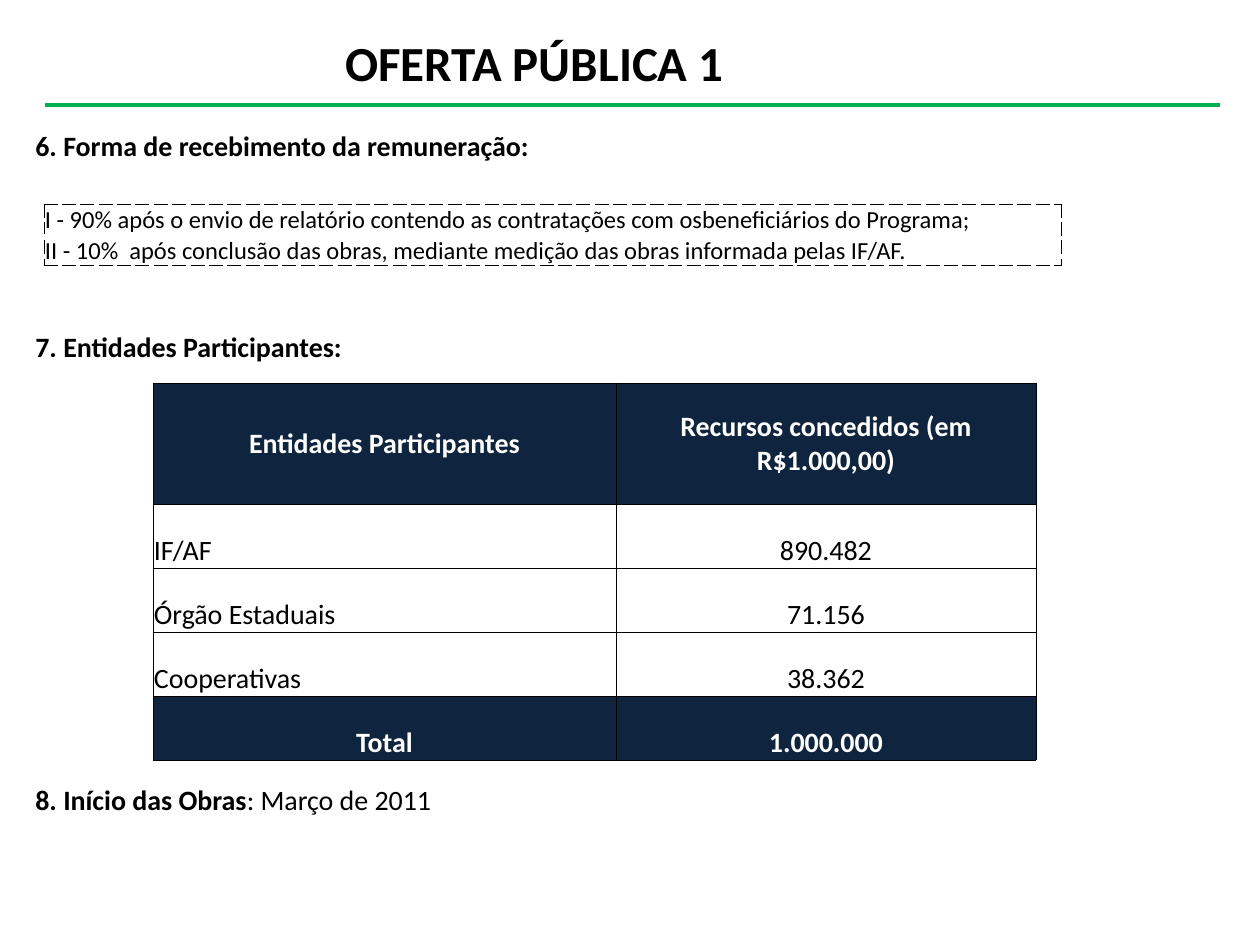
"""Build the slide on public offer 1: payment terms, participants and start of works."""
from lxml import etree
from pptx import Presentation
from pptx.dml.color import RGBColor
from pptx.enum.shapes import MSO_CONNECTOR
from pptx.enum.text import MSO_ANCHOR, PP_ALIGN
from pptx.oxml.ns import qn
from pptx.util import Pt

LEFT, CENTER, JUSTIFY = PP_ALIGN.LEFT, PP_ALIGN.CENTER, PP_ALIGN.JUSTIFY
MIDDLE, BOTTOM = MSO_ANCHOR.MIDDLE, MSO_ANCHOR.BOTTOM
STRAIGHT = MSO_CONNECTOR.STRAIGHT
PX = 914400 / 126
COLORS = {"text": "000000", "light": "FFFFFF", "navy": "0F243E", "green": "00B050"}


def style(paragraph, size, color="text", bold=False, align=LEFT):
    paragraph.alignment = align
    font = paragraph.font
    font.name, font.size, font.bold = "Calibri", Pt(size), bold
    font.color.rgb = RGBColor.from_string(COLORS[color])


def add_grid(left, top, widths, heights, dash):
    grid = slide.shapes.add_table(
        len(heights), len(widths),
        *(int(n * PX) for n in (left, top, sum(widths), sum(heights)))).table
    grid.first_row = grid.horz_banding = False
    for column, width in zip(grid.columns, widths):
        column.width = int(width * PX)
    for row, height in zip(grid.rows, heights):
        row.height = int(height * PX)
    for i, row in enumerate(grid.rows):
        for cell in row.cells:
            cell.margin_left = cell.margin_right = cell.margin_top = int(PX)
            cell.margin_bottom = 0
            cell.vertical_anchor = BOTTOM
            sides = ["L", "R", "T", "B"]
            if dash == "dash":
                sides.remove("B" if i == 0 else "T")
            for side in sides:
                border = etree.SubElement(cell._tc.get_or_add_tcPr(), qn(f"a:ln{side}"), w=str(Pt(0.5)))
                fill = etree.SubElement(border, qn("a:solidFill"))
                etree.SubElement(fill, qn("a:srgbClr"), val=COLORS["text"])
                etree.SubElement(border, qn("a:prstDash"), val=dash)
            cell.fill.background()
    return grid


prs = Presentation()
prs.slide_width, prs.slide_height = int(1260 * PX), int(945 * PX)
slide = prs.slides.add_slide(prs.slide_layouts[6])

rule = slide.shapes.add_connector(STRAIGHT, *(int(n * PX) for n in (45, 105, 1220, 105)))
rule.line.color.rgb = RGBColor.from_string(COLORS["green"])
rule.line.width = Pt(2.25)
etree.SubElement(rule._element.spPr, qn("a:effectLst"))

topics = slide.shapes.add_textbox(*(int(n * PX) for n in (23, 106, 1225, 776))).text_frame
topics.word_wrap = True
sections = [
    ("6. Forma de recebimento da remuneração:", "", 0),
    ("7. Entidades Participantes:", "", 86),
    ("8. Início das Obras", ": Março de 2011", 230),
]
for i, (heading, detail, gap) in enumerate(sections):
    topic = topics.add_paragraph() if i else topics.paragraphs[0]
    topic.line_spacing = 1.5
    topic.space_before = Pt(gap)
    style(topic, 16, bold=True, align=JUSTIFY)
    topic.add_run().text = heading
    if detail:
        start_date = topic.add_run()
        start_date.text = detail
        start_date.font.bold = False

entities = [
    ("Entidades Participantes", "Recursos concedidos (em R$1.000,00)"),
    ("IF/AF", "890.482"),
    ("Órgão Estaduais", "71.156"),
    ("Cooperativas", "38.362"),
    ("Total", "1.000.000"),
]
resources = add_grid(153, 383, [463, 420], [121] + [64] * 4, "solid")
for i, entity in enumerate(entities):
    emphasis = i in (0, len(entities) - 1)
    for j, value in enumerate(entity):
        cell = resources.cell(i, j)
        cell.text = value
        style(cell.text_frame.paragraphs[0], 16, "light" if emphasis else "text",
              emphasis, CENTER if emphasis or j else LEFT)
        if emphasis:
            cell.fill.solid()
            cell.fill.fore_color.rgb = RGBColor.from_string(COLORS["navy"])
        if i == 0:
            cell.vertical_anchor = MIDDLE

installments = [
    "I - 90% após o envio de relatório contendo as contratações com osbeneficiários do Programa;",
    "II - 10%  após conclusão das obras, mediante medição das obras informada pelas IF/AF.",
]
payments = add_grid(44, 204, [1017], [31, 31], "dash")
for i, installment in enumerate(installments):
    cell = payments.cell(i, 0)
    cell.text = installment
    style(cell.text_frame.paragraphs[0], 14)

title = slide.shapes.add_textbox(*(int(n * PX) for n in (333, 26, 556, 111))).text_frame
title.word_wrap = True
title.text = "OFERTA PÚBLICA 1"
style(title.paragraphs[0], 28, bold=True)

prs.save("out.pptx")
